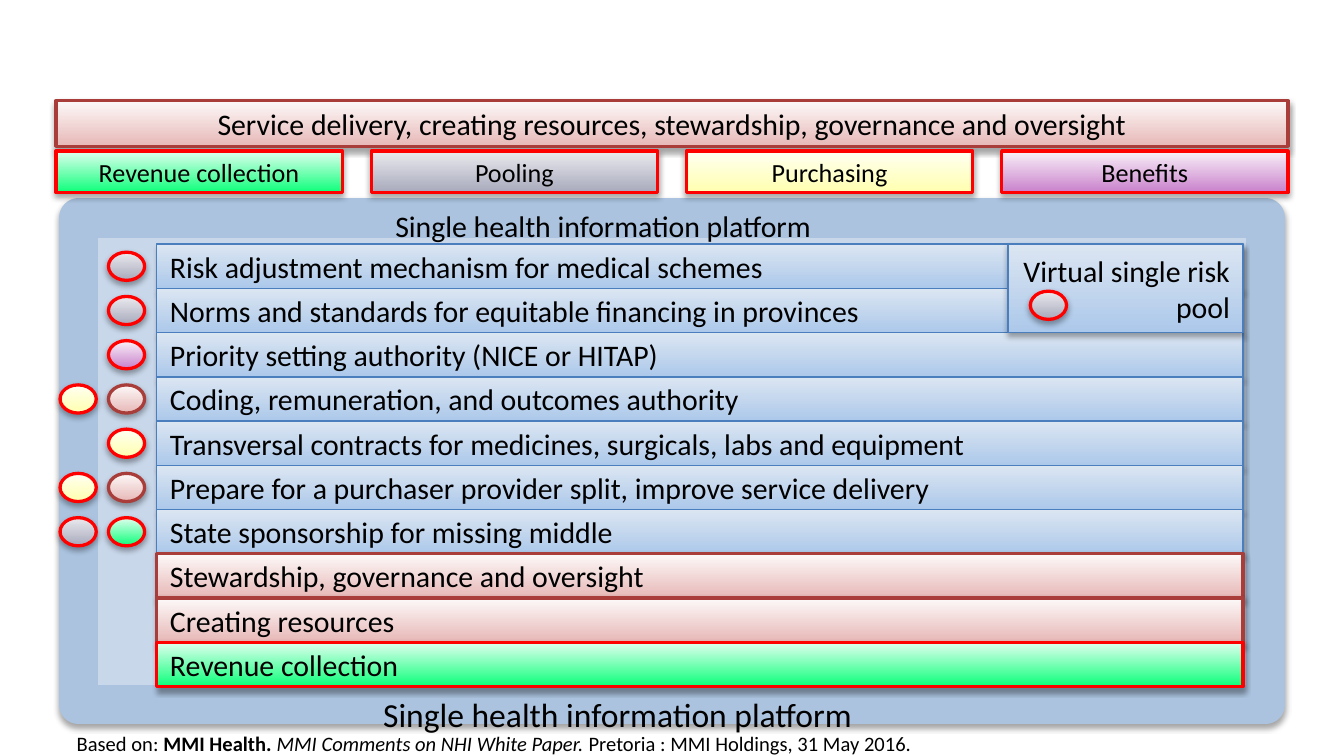
from dataclasses import dataclass

from lxml import etree
from pptx import Presentation
from pptx.dml.color import RGBColor
from pptx.enum import shapes, text
from pptx.oxml import ns
from pptx.util import Pt


@dataclass(frozen=True)
class Theme:
    """Holds the colours, type sizes and line widths of the slide."""
    font: str = "Calibri"
    ink: str = "000000"
    platform_fill: str = "C8D7EA"
    platform_line: str = "ABC3DF"
    large_size: int = 18
    body_size: int = 16
    tile_size: int = 14
    source_size: int = 11
    platform_width: float = 21
    marker_width: float = 19.4
    marker_height: float = 15.1
    marker_step: float = 25.9


THEME = Theme()
STYLES = {
    "intervention": ("ACC8EA", "DCE6F2", "4B7EBC", 0.75),
    "oversight": ("E7B8B7", "FDF9F9", "A93D3A", 1.75),
    "revenue": ("0DFF7A", "E1FFEF", "FF0000", 1.75),
    "pooling": ("A8AABC", "EAEAEE", "FF0000", 1.75),
    "purchasing": ("FFFFAF", "FFFFF3", "FF0000", 1.75),
    "benefits": ("C981CB", "F9F1F9", "FF0000", 1.75),
}
TILES = [
    ("Revenue collection", "revenue"),
    ("Pooling", "pooling"),
    ("Purchasing", "purchasing"),
    ("Benefits", "benefits"),
]
ROWS = [
    ("Risk adjustment mechanism for medical schemes", "intervention", ["pooling"]),
    ("Norms and standards for equitable financing in provinces", "intervention", ["pooling"]),
    ("Priority setting authority (NICE or HITAP)", "intervention", ["benefits"]),
    ("Coding, remuneration, and outcomes authority", "intervention", ["oversight", "purchasing"]),
    ("Transversal contracts for medicines, surgicals, labs and equipment", "intervention", ["purchasing"]),
    ("Prepare for a purchaser provider split, improve service delivery", "intervention", ["oversight", "purchasing"]),
    ("State sponsorship for missing middle", "intervention", ["revenue", "pooling"]),
    ("Stewardship, governance and oversight", "oversight", []),
    ("Creating resources", "oversight", []),
    ("Revenue collection", "revenue", []),
]
SOURCE = [
    ("Based on:", False, False),
    (" MMI Health. ", True, False),
    ("MMI Comments on NHI White Paper. ", False, True),
    ("Pretoria : MMI Holdings, 31 May 2016.", False, False),
]


def points(box):
    """Converts a box of left, top, width and height to lengths."""
    return [Pt(value) for value in box]


def format_runs(paragraph, size, align=text.PP_ALIGN.LEFT):
    """Formats every run of a paragraph alike."""
    paragraph.alignment = align
    for run in paragraph.runs:
        run.font.name = THEME.font
        run.font.size = Pt(size)
        run.font.color.rgb = RGBColor.from_string(THEME.ink)


def add_shadow(shape):
    """Gives a shape a soft shadow below it."""
    shape.shadow.inherit = False
    effects = shape._element.spPr.find(ns.qn("a:effectLst"))
    shadow = etree.SubElement(effects, ns.qn("a:outerShdw"), blurRad="40000",
                              dist="23000", dir="5400000", rotWithShape="0")
    colour = etree.SubElement(shadow, ns.qn("a:srgbClr"), val="000000")
    etree.SubElement(colour, ns.qn("a:alpha"), val="35000")


def add_shaded(slide, box, style, kind=shapes.MSO_SHAPE.RECTANGLE):
    """Adds a shape with the gradient and outline of a style."""
    dark, light, outline, width = STYLES[style]
    shape = slide.shapes.add_shape(kind, *points(box))
    shape.fill.gradient()
    shape.fill.gradient_angle = 90
    for stop, colour in zip(shape.fill.gradient_stops, (dark, light)):
        stop.color.rgb = RGBColor.from_string(colour)
    shape.line.color.rgb = RGBColor.from_string(outline)
    shape.line.width = Pt(width)
    add_shadow(shape)
    return shape


def add_bar(slide, box, wording, style, size=THEME.body_size, align=text.PP_ALIGN.LEFT):
    """Adds a shaded rectangle with a line of text."""
    frame = add_shaded(slide, box, style).text_frame
    frame.text = wording
    frame.word_wrap = True
    frame.vertical_anchor = text.MSO_ANCHOR.MIDDLE
    format_runs(frame.paragraphs[0], size, align)


def add_marker(slide, left, top, style):
    """Adds an oval that ties an intervention to a function."""
    box = (left, top, THEME.marker_width, THEME.marker_height)
    add_shaded(slide, box, style, shapes.MSO_SHAPE.OVAL)


def add_label(slide, box, parts, size):
    """Adds a text box made of (wording, bold, italic) parts."""
    frame = slide.shapes.add_textbox(*points(box)).text_frame
    frame.word_wrap = True
    frame.auto_size = text.MSO_AUTO_SIZE.SHAPE_TO_FIT_TEXT
    paragraph = frame.paragraphs[0]
    for wording, bold, italic in parts:
        run = paragraph.add_run()
        run.text = wording
        run.font.bold = bold
        run.font.italic = italic
    format_runs(paragraph, size)


def place_functions(slide, box):
    """Places the overall function bar and the four tiles below it."""
    left, top, width, height = box
    bar_height, tile_width, tile_height = 24.5, 153.4, 22.3
    add_bar(slide, (left, top, width, bar_height),
            "Service delivery, creating resources, stewardship, governance and oversight",
            "oversight", align=text.PP_ALIGN.CENTER)
    step = (width - tile_width) / (len(TILES) - 1)
    for index, (wording, style) in enumerate(TILES):
        tile = (left + index * step, top + height - tile_height, tile_width, tile_height)
        add_bar(slide, tile, wording, style, THEME.tile_size, text.PP_ALIGN.CENTER)


def place_platform(slide, box):
    """Places the platform frame with its two labels."""
    left, top, width, height = box
    frame = slide.shapes.add_shape(shapes.MSO_SHAPE.RECTANGLE, *points(box))
    frame.fill.solid()
    frame.fill.fore_color.rgb = RGBColor.from_string(THEME.platform_fill)
    frame.line.color.rgb = RGBColor.from_string(THEME.platform_line)
    frame.line.width = Pt(THEME.platform_width)
    add_shadow(frame)
    parts = [("Single health information platform", False, False)]
    add_label(slide, (left + 162.7, top - 9.3, 327, 26.6), parts, THEME.body_size)
    add_label(slide, (left + 156.2, top + height - 9.3, 330, 29), parts, THEME.large_size)


def place_interventions(slide, box):
    """Stacks the intervention rows with their markers to the left."""
    left, top, width, height = box
    row_height = height / len(ROWS)
    inset = (row_height - THEME.marker_height) / 2
    for index, (wording, style, markers) in enumerate(ROWS):
        row_top = top + index * row_height
        add_bar(slide, (left, row_top, width, row_height), wording, style)
        for slot, marker in enumerate(markers, 1):
            add_marker(slide, left - slot * THEME.marker_step, row_top + inset, marker)


def place_risk_pool(slide, box):
    """Places the risk pool box with its marker."""
    add_bar(slide, box, "Virtual single risk pool", "intervention", align=text.PP_ALIGN.RIGHT)
    add_marker(slide, box[0] + 12, box[1] + 25.2, "pooling")


def main():
    """Builds and saves the slide."""
    presentation = Presentation()
    presentation.slide_width, presentation.slide_height = Pt(720), Pt(405)
    slide = presentation.slides.add_slide(presentation.slide_layouts[6])
    place_platform(slide, (42, 116.8, 636, 260.6))
    place_interventions(slide, (84, 130.8, 582, 237))
    place_functions(slide, (30, 54, 660, 49.2))
    place_risk_pool(slide, (540, 130.8, 126, 47.4))
    add_label(slide, (34, 388.1, 658, 20.9), SOURCE, THEME.source_size)
    presentation.save("out.pptx")


if __name__ == "__main__":
    main()
